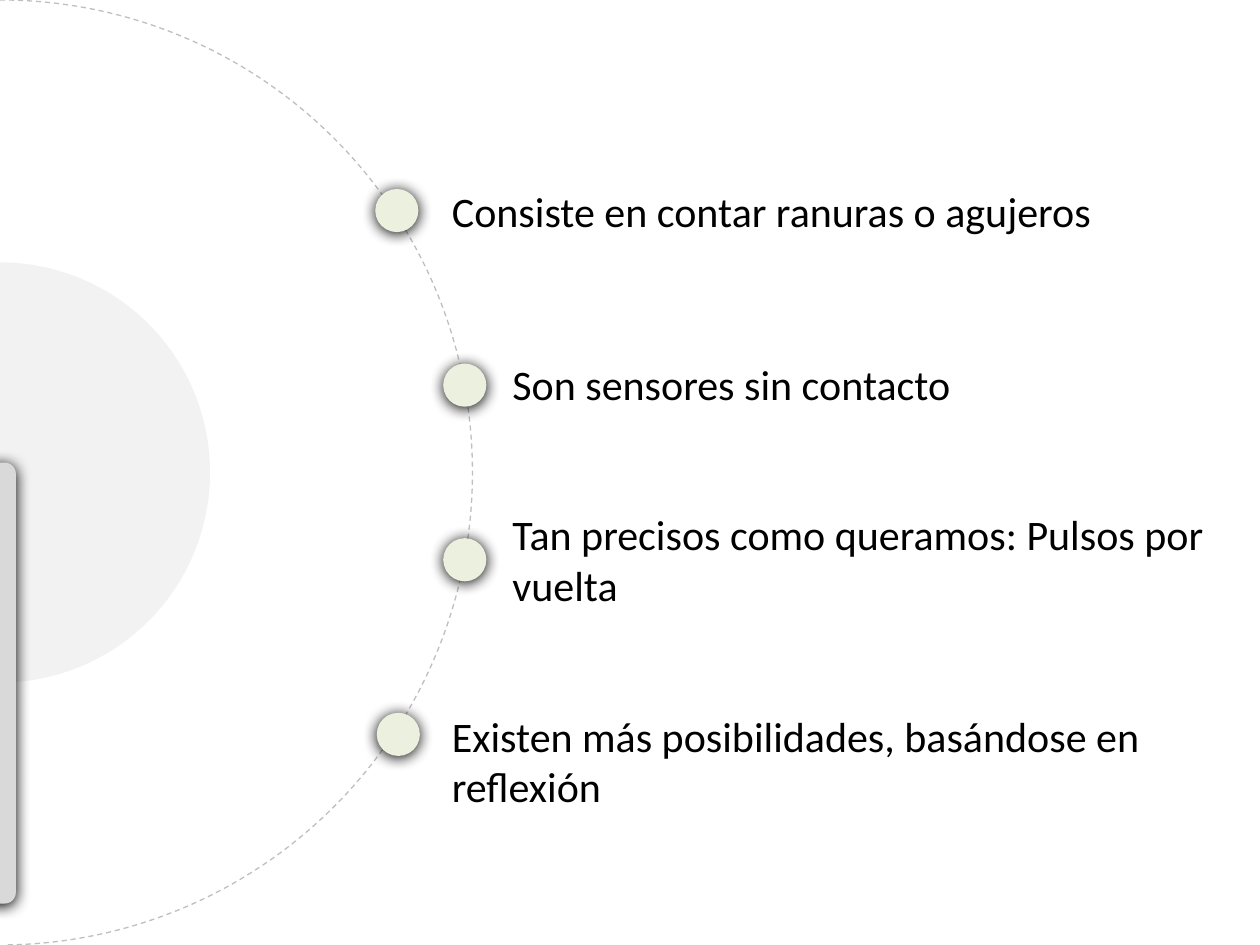
from dataclasses import dataclass

from lxml.etree import SubElement
from pptx import Presentation
from pptx.dml.color import RGBColor
from pptx.enum.dml import MSO_LINE
from pptx.enum.shapes import MSO_SHAPE
from pptx.enum.text import MSO_AUTO_SIZE
from pptx.oxml.ns import qn
from pptx.shapes.autoshape import Shape
from pptx.slide import Slide
from pptx.util import Cm, Pt


@dataclass(frozen=True)
class Theme:
    font: str = "Calibri"
    text_size: float = 24
    text: str = "000000"
    ring_fill: str = "FFFFFF"
    ring_line: str = "BFBFBF"
    ring_width: float = 0.75
    disc: str = "F2F2F2"
    dot: str = "EBF1DE"
    bar: str = "D9D9D9"
    shadow: str = "000000"
    shadow_blur: float = 8.5
    shadow_distance: float = 1


@dataclass(frozen=True)
class Point:
    """One statement with its dot on the ring; lengths in centimetres."""
    text: str
    dot_x: float
    left: float
    top: float
    width: float
    height: float


THEME = Theme()
SLIDE_WIDTH, SLIDE_HEIGHT = 25.4, 19.05
MIDDLE = SLIDE_HEIGHT / 2
DISC_SIZE = 8.47
DOT_SIZE = 0.87
DOT_STEP = 3.52
HALF_TURN = (162, 53.7)  # start and end angles of the right half

POINTS = (
    Point("Consiste en contar ranuras o agujeros", 8.0, 8.86, 3.61, 13.82, 1.27),
    Point("Son sensores sin contacto", 9.37, 10.08, 7.11, 11.3, 1.27),
    Point("Tan precisos como queramos: Pulsos por vuelta", 9.37, 10.08, 10.13, 15.01, 2.31),
    Point("Existen más posibilidades, basándose en reflexión", 8.03, 8.86, 14.2, 16.03, 2.31),
)


def add_centred(slide: Slide, preset: MSO_SHAPE, x: float, y: float,
                width: float, height: float, fill: str) -> Shape:
    """Add a flat shape without outline around the centre (x, y)."""
    shape = slide.shapes.add_shape(preset, Cm(x - width / 2), Cm(y - height / 2),
                                   Cm(width), Cm(height))
    shape.shadow.inherit = False
    shape.fill.solid()
    shape.fill.fore_color.rgb = RGBColor.from_string(fill)
    shape.line.fill.background()
    return shape


def add_half_disc(slide: Slide, size: float, fill: str) -> Shape:
    shape = add_centred(slide, MSO_SHAPE.ARC, 0, MIDDLE, size, size, fill)
    for index, angle in enumerate(HALF_TURN):
        shape.adjustments[index] = angle
    return shape


def add_shadow(shape: Shape) -> None:
    effects = shape.element.spPr.find(qn("a:effectLst"))
    shadow = SubElement(effects, qn("a:outerShdw"), {
        "blurRad": str(Pt(THEME.shadow_blur)),
        "dist": str(Pt(THEME.shadow_distance)),
        "dir": "5400000",
        "rotWithShape": "0",
    })
    SubElement(shadow, qn("a:srgbClr"), val=THEME.shadow)


def add_statement(slide: Slide, point: Point) -> None:
    box = slide.shapes.add_textbox(Cm(point.left), Cm(point.top),
                                   Cm(point.width), Cm(point.height))
    frame = box.text_frame
    frame.word_wrap = True
    frame.auto_size = MSO_AUTO_SIZE.SHAPE_TO_FIT_TEXT
    frame.text = point.text
    font = frame.paragraphs[0].runs[0].font
    font.name = THEME.font
    font.size = Pt(THEME.text_size)
    font.color.rgb = RGBColor.from_string(THEME.text)


def main() -> None:
    deck = Presentation()
    deck.slide_width, deck.slide_height = Cm(SLIDE_WIDTH), Cm(SLIDE_HEIGHT)
    slide = deck.slides.add_slide(deck.slide_layouts[6])

    ring = add_half_disc(slide, SLIDE_HEIGHT, THEME.ring_fill)
    ring.line.color.rgb = RGBColor.from_string(THEME.ring_line)
    ring.line.width = Pt(THEME.ring_width)
    ring.line.dash_style = MSO_LINE.DASH

    for point in POINTS:
        add_statement(slide, point)
    first_y = MIDDLE - DOT_STEP * (len(POINTS) - 1) / 2
    for index, point in enumerate(POINTS):
        dot = add_centred(slide, MSO_SHAPE.OVAL, point.dot_x, first_y + index * DOT_STEP,
                          DOT_SIZE, DOT_SIZE, THEME.dot)
        add_shadow(dot)

    add_half_disc(slide, DISC_SIZE, THEME.disc)
    bar = add_centred(slide, MSO_SHAPE.ROUNDED_RECTANGLE, 0, 13.77, 0.64, 8.89, THEME.bar)
    bar.adjustments[0] = 0.35
    bar.rotation = 180
    add_shadow(bar)

    deck.save("out.pptx")


if __name__ == "__main__":
    main()
